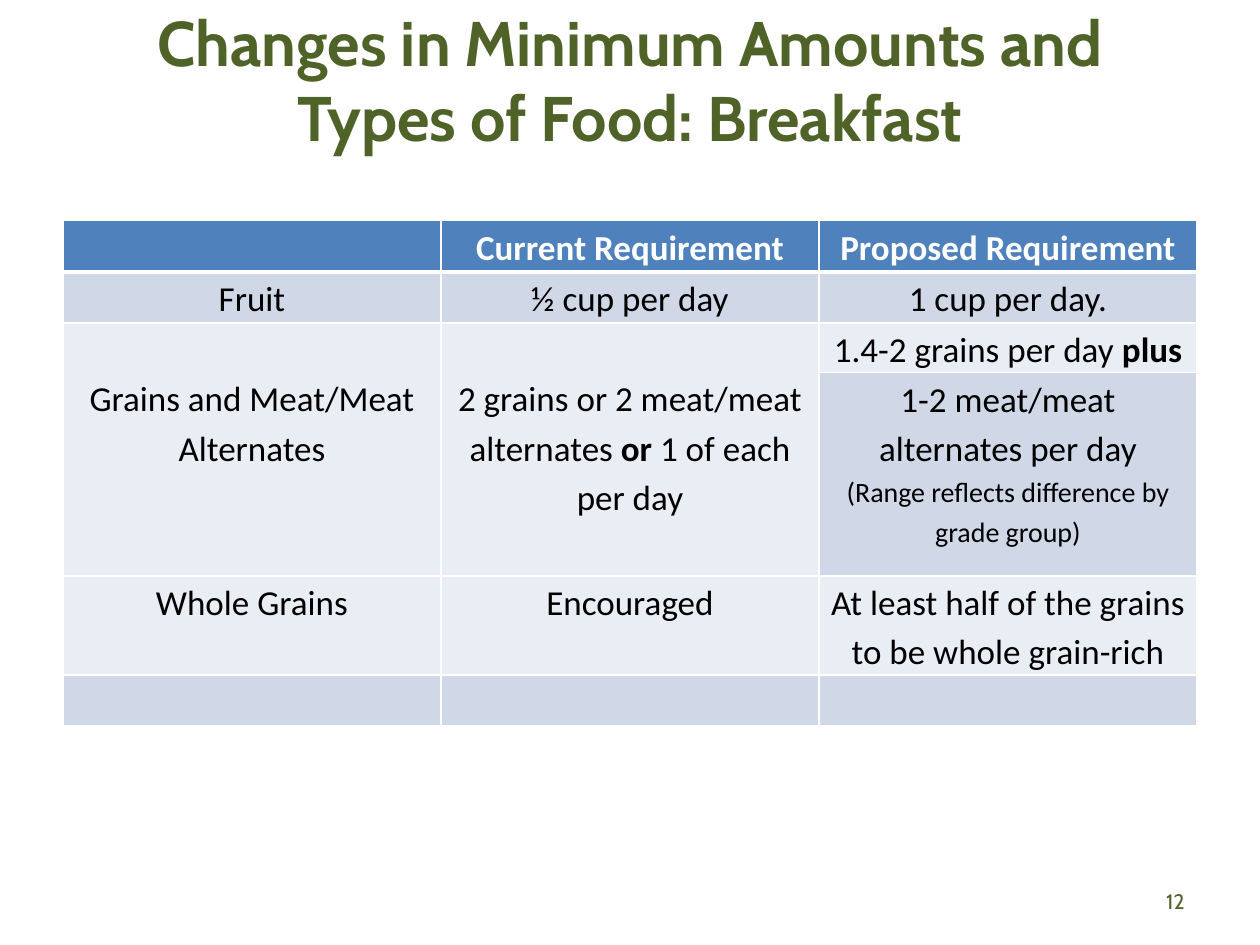
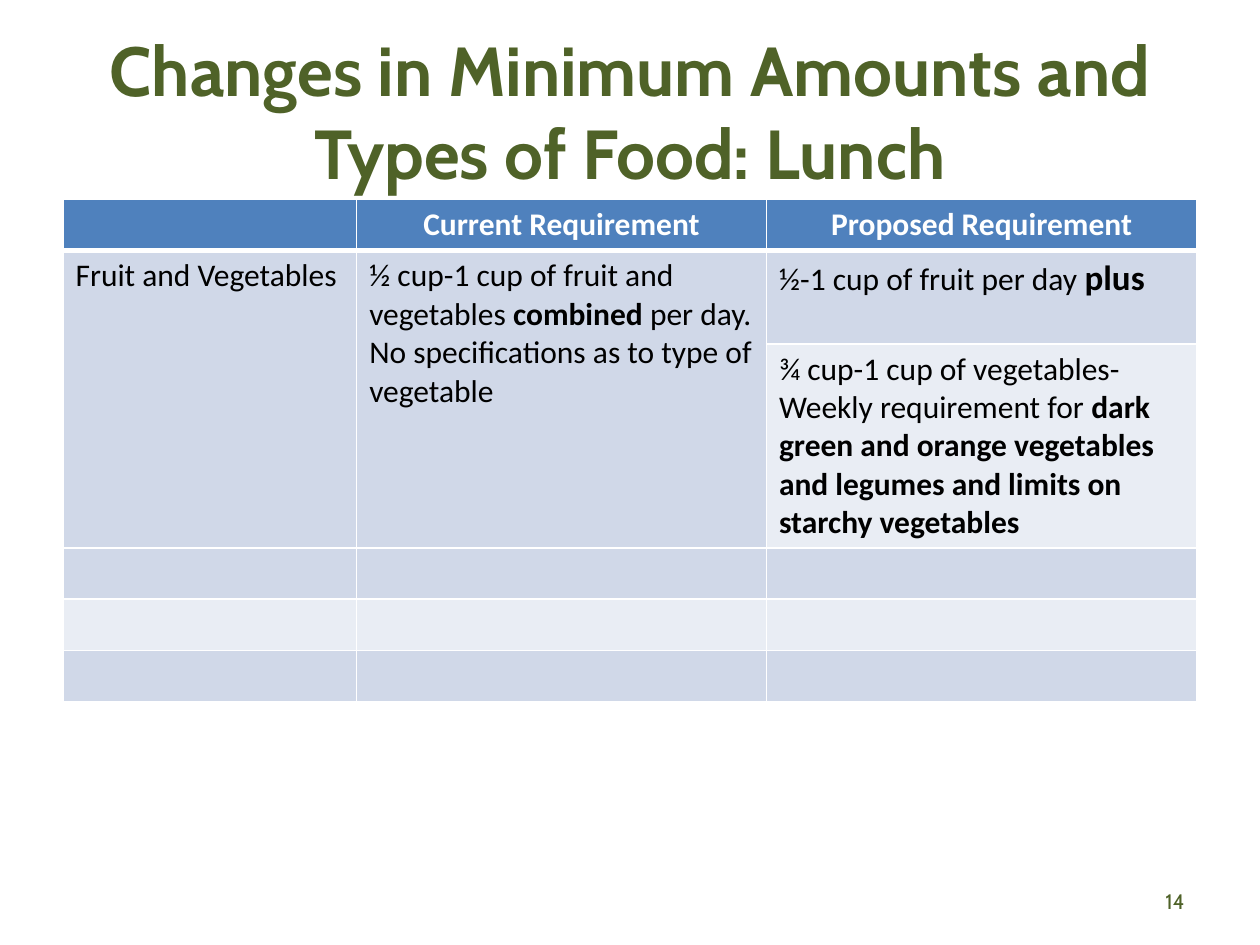
"""Build two slides comparing school meal requirements."""
from dataclasses import dataclass

from lxml.etree import SubElement
from pptx import Presentation
from pptx.dml.color import RGBColor
from pptx.enum.text import MSO_ANCHOR, PP_ALIGN
from pptx.oxml.ns import qn
from pptx.util import Cm, Pt


@dataclass(frozen=True)
class Theme:
    """Hold the colours, fonts and type sizes of the deck."""
    green: str = "4F6228"
    head: str = "4F81BD"
    bands: tuple = ("E9EDF4", "D0D8E8")
    white: str = "FFFFFF"
    black: str = "000000"
    display: str = "Cabin"
    body: str = "Calibri"
    note: int = 16
    large: int = 20
    medium: int = 18
    number: int = 12
    rule: int = 1
    thick: int = 3


@dataclass(frozen=True)
class Para:
    """Hold a text with its *strong* parts and its own sizes."""
    text: str
    size: int = 0
    strong: int = 0


THEME = Theme()
LEFT, WIDTH = 1.27, 22.86
HEADS = ("", "Current Requirement", "Proposed Requirement")


def style(font, name, size, color, bold=False):
    """Set the look of a font."""
    font.name, font.size, font.bold = name, Pt(size), bold
    font.color.rgb = RGBColor.from_string(color)


def add_text(slide, text, box, size, align, bold=False, foot=0.13):
    """Add a green text box with a given bottom inset."""
    frame = slide.shapes.add_textbox(*map(Cm, box)).text_frame
    frame.word_wrap = True
    frame.vertical_anchor = MSO_ANCHOR.MIDDLE
    frame.margin_bottom = Cm(foot)
    para = frame.paragraphs[0]
    para.alignment = align
    style(para.font, THEME.display, size, THEME.green, bold)
    para.add_run().text = text


def add_rules(cell, row):
    """Draw white borders, thick between head and body."""
    props = cell._tc.get_or_add_tcPr()
    for side in "LRTB":
        thick = (row, side) in ((0, "B"), (1, "T"))
        width = THEME.thick if thick else THEME.rule
        line = SubElement(props, qn(f"a:ln{side}"), w=str(Pt(width)))
        fill = SubElement(line, qn("a:solidFill"))
        SubElement(fill, qn("a:srgbClr"), val=THEME.white)


def write(para, item, size, color, bold):
    """Write a paragraph, with strong parts between stars."""
    size = item.size or size
    style(para.font, THEME.body, size, color, bold)
    for i, part in enumerate(item.text.split("*")):
        if part:
            run = para.add_run()
            run.text = part
            if i % 2:
                run.font.bold = True
                run.font.size = Pt(item.strong or size)


def fill_cell(cell, content, size, color, bold=False, center=True, drop=0):
    """Fill a cell with text, centred and tight or flush left."""
    items = content if isinstance(content, tuple) else (content,)
    if center:
        cell.margin_left = cell.margin_right = Cm(0.18)
        cell.margin_top, cell.margin_bottom = Cm(drop), Cm(0)
    for i, item in enumerate(items):
        frame = cell.text_frame
        para = frame.add_paragraph() if i else frame.paragraphs[0]
        if center:
            para.alignment, para.line_spacing = PP_ALIGN.CENTER, 1.15
        item = item if isinstance(item, Para) else Para(item)
        write(para, item, size, color, bold)


def add_grid(slide, top, cols, rows, body, size, center, joined):
    """Add a banded table whose first two columns join two rows."""
    box = map(Cm, (LEFT, top, WIDTH, sum(rows)))
    grid = slide.shapes.add_table(len(rows), len(cols), *box).table
    grid.horz_banding = False
    for col, width in zip(grid.columns, cols):
        col.width = Cm(width)
    for r, height in enumerate(rows):
        grid.rows[r].height = Cm(height)
        for c in range(len(cols)):
            cell = grid.cell(r, c)
            add_rules(cell, r)
            cell.fill.solid()
            color = THEME.bands[r % 2] if r else THEME.head
            cell.fill.fore_color.rgb = RGBColor.from_string(color)
    for c in (0, 1):
        grid.cell(joined, c).merge(grid.cell(joined + 1, c))
    for c, text in enumerate(HEADS):
        if text:
            fill_cell(grid.cell(0, c), text, size, THEME.white, True)
    for r, texts in enumerate(body, 1):
        for c, text in enumerate(texts):
            if text:
                drop = 0.99 if r == joined and c < 2 else 0
                fill_cell(grid.cell(r, c), text, size, THEME.black,
                          center=center, drop=drop)


def add_page(deck, meal, number, top, size, foot):
    """Add a slide with its title and number."""
    slide = deck.slides.add_slide(deck.slide_layouts[6])
    title = f"Changes in Minimum Amounts and Types of Food: {meal}"
    add_text(slide, title, (LEFT, top, WIDTH, 3.18), size,
             PP_ALIGN.CENTER, True, foot)
    add_text(slide, number, (18.2, 17.65, 5.93, 1.02), THEME.number,
             PP_ALIGN.RIGHT)
    return slide


def main():
    """Build and save the deck."""
    deck = Presentation()
    deck.slide_width, deck.slide_height = Cm(25.4), Cm(19.05)

    morning = (
        ("Fruit", "½ cup per day", "1 cup per day."),
        ("Grains and Meat/Meat Alternates",
         "2 grains or 2 meat/meat alternates *or* 1 of each per day",
         "1.4-2 grains per day *plus*"),
        ("", "", ("1-2 meat/meat alternates per day",
                  Para("(Range reflects difference by grade group)",
                       THEME.note))),
        ("Whole Grains", "Encouraged",
         "At least half of the grains to be whole grain-rich"),
    )
    slide = add_page(deck, "Breakfast", "12", 0.76, 36, 1.65)
    add_grid(slide, 4.45, (7.62,) * 3, (1.03, 1.03, 1, 4.1, 2, 1.03),
             morning, THEME.large, True, 2)

    noon = (
        ("Fruit and Vegetables",
         ("½ cup-1 cup of fruit and vegetables *combined* per day.",
          "No specifications as to type of vegetable"),
         Para("½-1 cup of fruit per day *plus*", strong=THEME.large)),
        ("", "", ("¾ cup-1 cup of vegetables-",
                  "Weekly requirement for *dark green and orange vegetables"
                  " and legumes and limits on starchy vegetables*")),
    )
    slide = add_page(deck, "Lunch", "14", 0.64, 39.6, 0.13)
    add_grid(slide, 4.02, (5.92, 8.26, 8.68),
             (1.03, 1.88, 4.12, 1.03, 1.03, 1.03),
             noon, THEME.medium, False, 1)

    deck.save("out.pptx")


if __name__ == "__main__":
    main()
